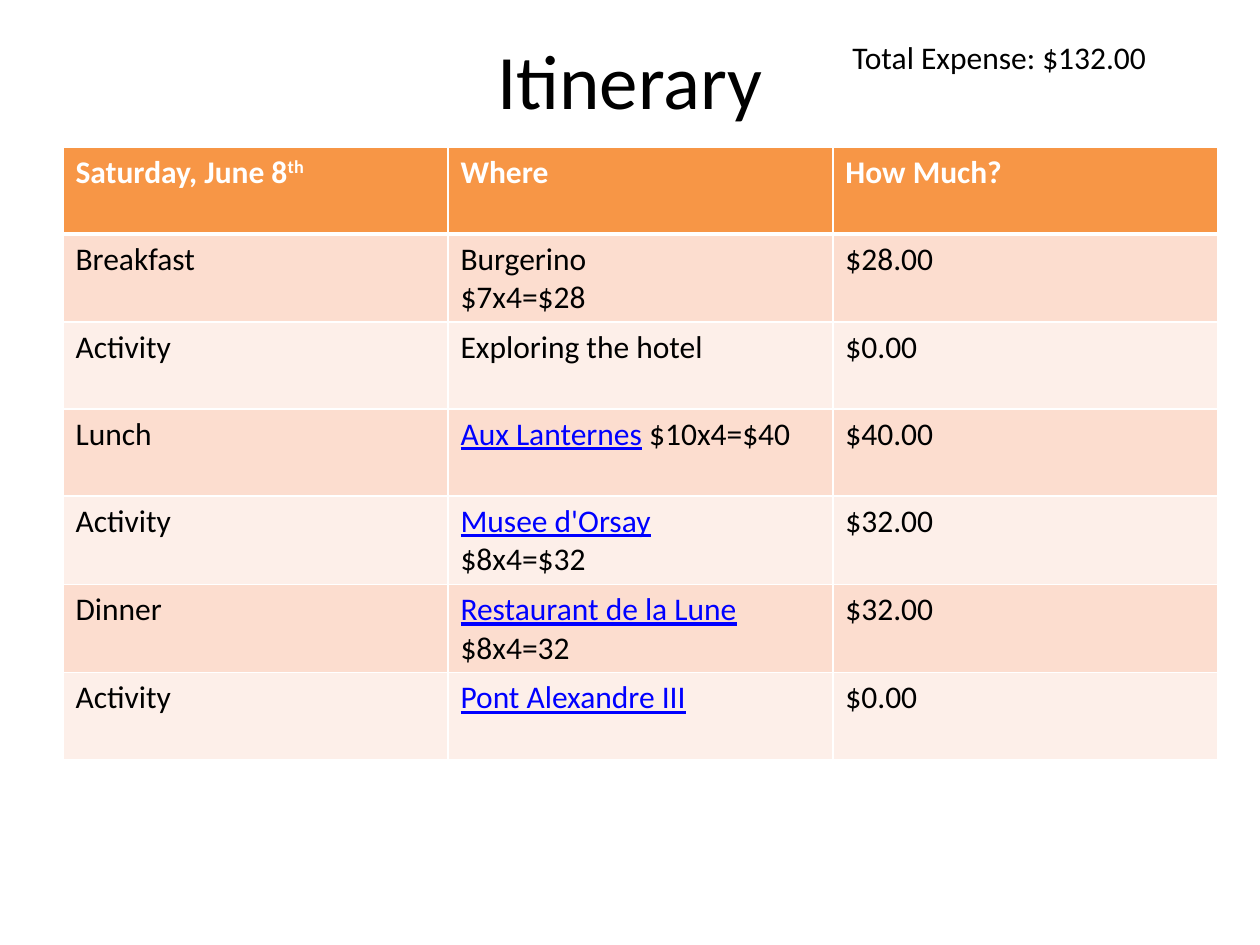
from lxml.etree import SubElement
from pptx import Presentation
from pptx.dml.color import RGBColor
from pptx.enum.text import MSO_ANCHOR, PP_ALIGN
from pptx.oxml.ns import qn
from pptx.util import Pt

PX = 914400 // 126
FONT = "Calibri"
BLACK = RGBColor(0x00, 0x00, 0x00)
WHITE = RGBColor(0xFF, 0xFF, 0xFF)
LINK_BLUE = RGBColor(0x00, 0x00, 0xFF)
HEADER_ORANGE = RGBColor(0xF7, 0x96, 0x46)
BANDS = (RGBColor(0xFC, 0xDD, 0xCF), RGBColor(0xFD, 0xEF, 0xE9))

LINK = {"color": LINK_BLUE, "underline": True}
SUPERSCRIPT = {"baseline": 30000}

# A cell is a list of paragraphs; a paragraph is a list of (text, format) runs.
HEADER = [
    [[("Saturday, June 8", {}), ("th", SUPERSCRIPT)]],
    [[("Where", {})]],
    [[("How Much?", {})]],
]
STOPS = [
    ("Breakfast", [[("Burgerino", {})], [("$7x4=$28", {})]], "$28.00"),
    ("Activity", [[("Exploring the hotel", {})]], "$0.00"),
    ("Lunch", [[("Aux Lanternes", LINK), (" $10x4=$40", {})]], "$40.00"),
    ("Activity", [[("Musee d'Orsay", LINK)], [("$8x4=$32", {})]], "$32.00"),
    ("Dinner", [[("Restaurant de la Lune", LINK)], [("$8x4=32", {})]], "$32.00"),
    ("Activity", [[("Pont Alexandre III", LINK)]], "$0.00"),
]


def add_run(paragraph, text, size=18, color=BLACK, bold=False, underline=False, baseline=0):
    run = paragraph.add_run()
    run.text = text
    font = run.font
    font.name, font.size = FONT, Pt(size)
    font.bold, font.underline = bold, underline
    font.color.rgb = color
    if baseline:
        run._r.get_or_add_rPr().set("baseline", str(baseline))


def add_label(slide, box, text, align=PP_ALIGN.LEFT, anchor=MSO_ANCHOR.TOP, **style):
    frame = slide.shapes.add_textbox(*(n * PX for n in box)).text_frame
    frame.word_wrap = True
    frame.vertical_anchor = anchor
    frame.paragraphs[0].alignment = align
    add_run(frame.paragraphs[0], text, **style)


def set_borders(cell, top=1, bottom=1):
    properties = cell._tc.get_or_add_tcPr()
    for side, width in (("L", 1), ("R", 1), ("T", top), ("B", bottom)):
        line = SubElement(properties, qn(f"a:ln{side}"), w=str(Pt(width)))
        fill = SubElement(line, qn("a:solidFill"))
        SubElement(fill, qn("a:srgbClr"), val=str(WHITE))


def fill_cell(cell, paragraphs, background, **style):
    cell.fill.solid()
    cell.fill.fore_color.rgb = background
    frame = cell.text_frame
    for index, runs in enumerate(paragraphs):
        paragraph = frame.add_paragraph() if index else frame.paragraphs[0]
        for text, extra in runs:
            add_run(paragraph, text, **{**style, **extra})


def add_itinerary(slide, box):
    left, top, width, height = box
    rows = [HEADER] + [
        [[[(event, {})]], where, [[(cost, {})]]] for event, where, cost in STOPS
    ]
    table = slide.shapes.add_table(
        len(rows), len(HEADER), left * PX, top * PX, width * PX, height * PX
    ).table
    for column in table.columns:
        column.width = width * PX // len(HEADER)
    for r, row in enumerate(rows):
        table.rows[r].height = height * PX // len(rows)
        for c, paragraphs in enumerate(row):
            cell = table.cell(r, c)
            set_borders(cell, top=3 if r == 1 else 1, bottom=3 if r == 0 else 1)
            if r == 0:
                fill_cell(cell, paragraphs, HEADER_ORANGE, color=WHITE, bold=True)
            else:
                fill_cell(cell, paragraphs, BANDS[(r - 1) % 2])


def main():
    presentation = Presentation()
    presentation.slide_width, presentation.slide_height = 1260 * PX, 945 * PX
    slide = presentation.slides.add_slide(presentation.slide_layouts[6])
    add_label(slide, (63, 0, 1134, 158), "Itinerary", size=44,
              align=PP_ALIGN.CENTER, anchor=MSO_ANCHOR.MIDDLE)
    add_label(slide, (840, 32, 388, 50), "Total Expense: $132.00")
    add_itinerary(slide, (63, 147, 1155, 609))
    presentation.save("out.pptx")


if __name__ == "__main__":
    main()
